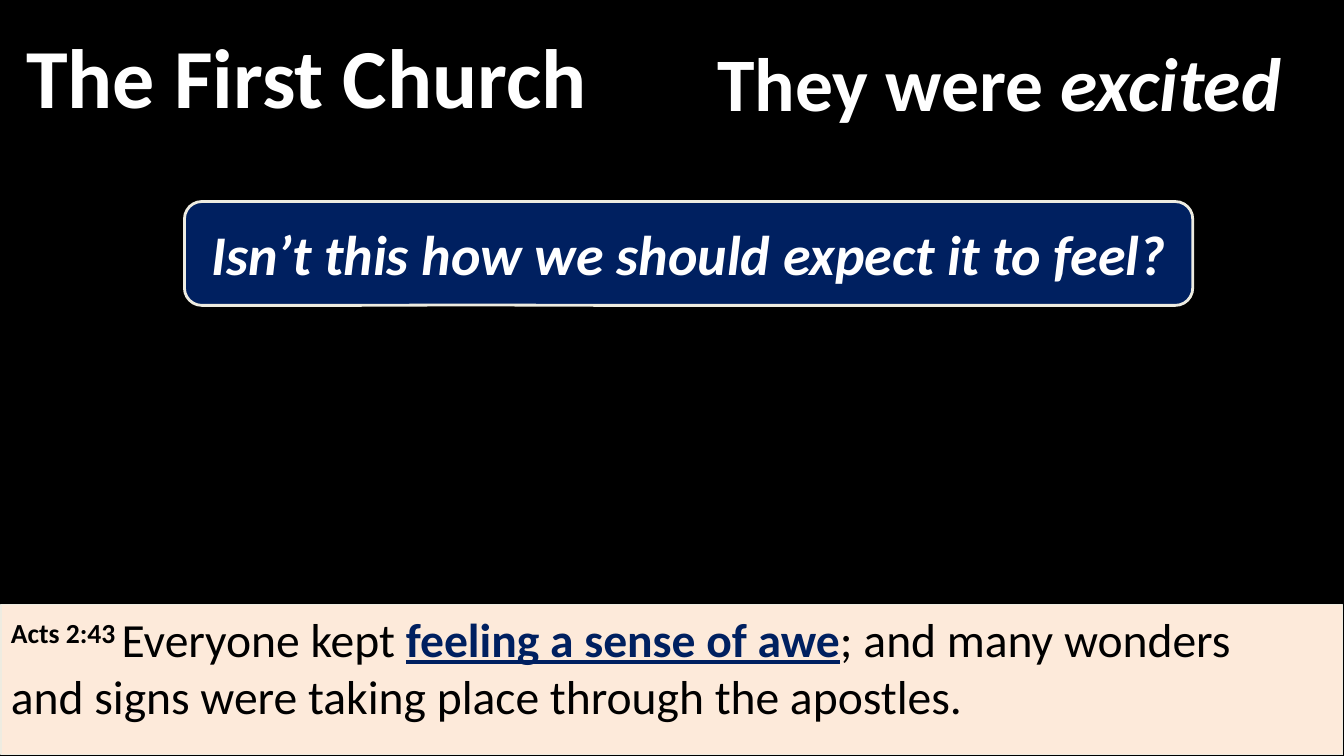
import pptx
import pptx.util
import pptx.dml.color
import pptx.enum.shapes
import pptx.enum.text

Inches = pptx.util.Inches
Shape = pptx.enum.shapes.MSO_SHAPE
Anchor = pptx.enum.text.MSO_ANCHOR
Align = pptx.enum.text.PP_ALIGN

THEME = {
    "font": "Calibri",
    "black": "000000", "white": "FFFFFF", "navy": "002060",
    "cream": "FDEADA", "edge": "EEECE1",
    "title": 60, "heading": 54, "question": 40, "verse": 34,
}

# Each span is (text, styles); styles may name bold, italic, underline, raised.
VERSE = {
    "box": (0.01, 6, 13.31, 1.49), "size": "verse", "color": "black",
    "fill": "cream", "line": 0.75,
    "spans": [
        ("Acts 2:43\u00a0", {"bold", "raised"}),
        ("Everyone kept ", set()),
        ("feeling a sense of awe", {"bold", "underline", "navy"}),
        ("; and many\u00a0wonders and\u00a0signs were taking place through the apostles.", set()),
    ],
}
CALLOUTS = [
    {"box": (0, 0.33, 6.08, 0.83), "size": "title",
     "spans": [("The First Church", {"bold"})]},
    {"box": (1.83, 2, 10, 1.03), "size": "question", "fill": "navy", "line": 2,
     "spans": [("Isn’t this how we should expect it to feel?", {"bold", "italic"})]},
    {"box": (6.83, 0.39, 6.33, 0.84), "size": "heading",
     "spans": [("They were ", {"bold"}), ("excited ", {"bold", "italic"})]},
]
CALLOUT_TAIL = (-0.22, 0.496, 0.167)


def theme_color(name):
    return pptx.dml.color.RGBColor.from_string(THEME[name])


def add_box(page, kind, item, color):
    """Add a shape with its fill, outline and styled text."""
    box = page.shapes.add_shape(kind, *map(Inches, item["box"]))
    box.shadow.inherit = False
    if "fill" in item:
        box.fill.solid()
        box.fill.fore_color.rgb = theme_color(item["fill"])
        box.line.color.rgb = theme_color("edge")
        box.line.width = pptx.util.Pt(item["line"])
    else:
        box.fill.background()
        box.line.fill.background()
    frame = box.text_frame
    frame.word_wrap = True
    para = frame.paragraphs[0]
    for text, styles in item["spans"]:
        span = para.add_run()
        span.text = text
        font = span.font
        font.name = THEME["font"]
        font.size = pptx.util.Pt(THEME[item["size"]])
        font.bold = "bold" in styles
        font.italic = "italic" in styles
        font.underline = "underline" in styles
        font.color.rgb = theme_color("navy" if "navy" in styles else color)
        if "raised" in styles:
            span._r.get_or_add_rPr().set("baseline", "30000")
    return box


def main():
    deck = pptx.Presentation()
    deck.slide_width, deck.slide_height = Inches(13.33), Inches(7.5)
    page = deck.slides.add_slide(deck.slide_layouts[6])
    page.background.fill.solid()
    page.background.fill.fore_color.rgb = theme_color("black")

    verse = add_box(page, Shape.RECTANGLE, VERSE, VERSE["color"])
    verse.text_frame.vertical_anchor = Anchor.TOP
    verse.text_frame.paragraphs[0].alignment = Align.LEFT

    for item in CALLOUTS:
        callout = add_box(page, Shape.ROUNDED_RECTANGULAR_CALLOUT, item, "white")
        for index, value in enumerate(CALLOUT_TAIL):
            callout.adjustments[index] = value
        callout.text_frame.vertical_anchor = Anchor.MIDDLE
        callout.text_frame.paragraphs[0].alignment = Align.CENTER

    deck.save("out.pptx")


if __name__ == "__main__":
    main()
